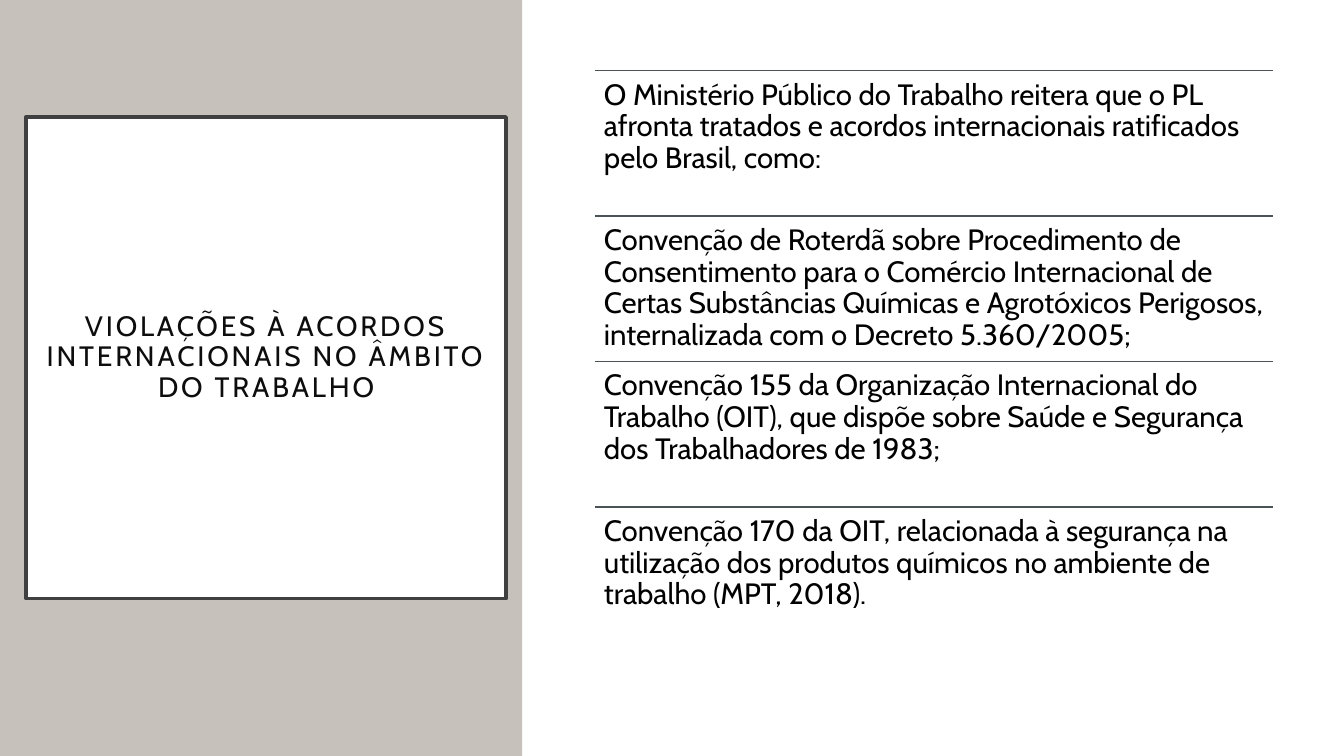
from dataclasses import dataclass

from lxml.etree import SubElement
from pptx import Presentation
from pptx.dml.color import RGBColor
from pptx.enum.shapes import MSO_CONNECTOR as CONN, MSO_SHAPE as SHAPE
from pptx.enum.text import MSO_ANCHOR as ANCHOR, PP_ALIGN as ALIGN
from pptx.oxml.ns import qn
from pptx.util import Inches, Pt

WIDTH, HEIGHT = 13.33, 7.5
FONT = "Cabin"
COLORS = {
    "sand": "C6C1BA",
    "white": "FFFFFF",
    "frame": "404040",
    "title": "0D0D0D",
    "rule": "4A5356",
    "text": "000000",
}
LIST_LEFT, LIST_TOP, LIST_WIDTH, ROW_HEIGHT = 5.9, 0.7, 6.73, 1.443

TITLE = "VIOLAÇÕES À ACORDOS INTERNACIONAIS NO ÂMBITO DO TRABALHO"
ITEMS = [
    "O Ministério Público do Trabalho reitera que o PL afronta tratados e acordos "
    "internacionais ratificados pelo Brasil, como:",
    "Convenção de Roterdã sobre Procedimento de Consentimento para o Comércio "
    "Internacional de Certas Substâncias Químicas e Agrotóxicos Perigosos, "
    "internalizada com o Decreto 5.360/2005;",
    "Convenção 155 da Organização Internacional do Trabalho (OIT), que dispõe sobre "
    "Saúde e Segurança dos Trabalhadores de 1983;",
    "Convenção 170 da OIT, relacionada à segurança na utilização dos produtos "
    "químicos no ambiente de trabalho (MPT, 2018).",
]


@dataclass(frozen=True)
class Box:
    left: float
    top: float
    width: float
    height: float

    def emu(self) -> list:
        return [Inches(v) for v in (self.left, self.top, self.width, self.height)]


@dataclass(frozen=True)
class TextStyle:
    size: float
    color: str
    inset: float
    align: ALIGN
    anchor: ANCHOR
    spacing: int = 0


TITLE_STYLE = TextStyle(20, "title", 0.2, ALIGN.CENTER, ANCHOR.MIDDLE, 200)
ITEM_STYLE = TextStyle(21, "text", 0.09, ALIGN.LEFT, ANCHOR.TOP)


def rgb(name: str) -> RGBColor:
    return RGBColor.from_string(COLORS[name])


def add_rect(slide, box: Box, fill: str, line: str = "", weight: float = 0):
    sp = slide.shapes.add_shape(SHAPE.RECTANGLE, *box.emu())
    sp.shadow.inherit = False
    sp.fill.solid()
    sp.fill.fore_color.rgb = rgb(fill)
    if line:
        sp.line.color.rgb = rgb(line)
        sp.line.width = Pt(weight)
    else:
        sp.line.fill.background()
    return sp


def write(sp, text: str, style: TextStyle) -> None:
    tf = sp.text_frame
    tf.word_wrap = True
    tf.vertical_anchor = style.anchor
    tf.margin_left = tf.margin_right = Inches(style.inset)
    tf.margin_top = tf.margin_bottom = Inches(style.inset)
    p = tf.paragraphs[0]
    r = p.add_run()
    r.text = text
    p.alignment = style.align
    p.line_spacing = 0.9
    p.font.name = FONT
    p.font.size = Pt(style.size)
    p.font.color.rgb = rgb(style.color)
    if style.spacing:
        r.font._element.set("spc", str(style.spacing))


def add_rule(slide, left: float, top: float, width: float) -> None:
    y = Inches(top)
    line = slide.shapes.add_connector(
        CONN.STRAIGHT, Inches(left), y, Inches(left + width), y
    )
    line.line.color.rgb = rgb("rule")
    line.line.width = Pt(1)
    SubElement(line._element.spPr, qn("a:effectLst"))


def add_item(slide, row: int, text: str) -> None:
    box = Box(LIST_LEFT, LIST_TOP + row * ROW_HEIGHT, LIST_WIDTH, ROW_HEIGHT)
    add_rule(slide, box.left, box.top, box.width)
    write(slide.shapes.add_textbox(*box.emu()), text, ITEM_STYLE)


def main() -> None:
    prs = Presentation()
    prs.slide_width, prs.slide_height = Inches(WIDTH), Inches(HEIGHT)
    slide = prs.slides.add_slide(prs.slide_layouts[6])

    add_rect(slide, Box(0, 0, 5.18, HEIGHT), "sand")
    frame = add_rect(slide, Box(0.26, 1.16, 4.76, 4.78), "white", "frame", 2.5)
    write(frame, TITLE, TITLE_STYLE)
    add_rect(slide, Box(5.2, 0, WIDTH - 5.2, HEIGHT), "white")
    for row, text in enumerate(ITEMS):
        add_item(slide, row, text)

    prs.save("out.pptx")


if __name__ == "__main__":
    main()
